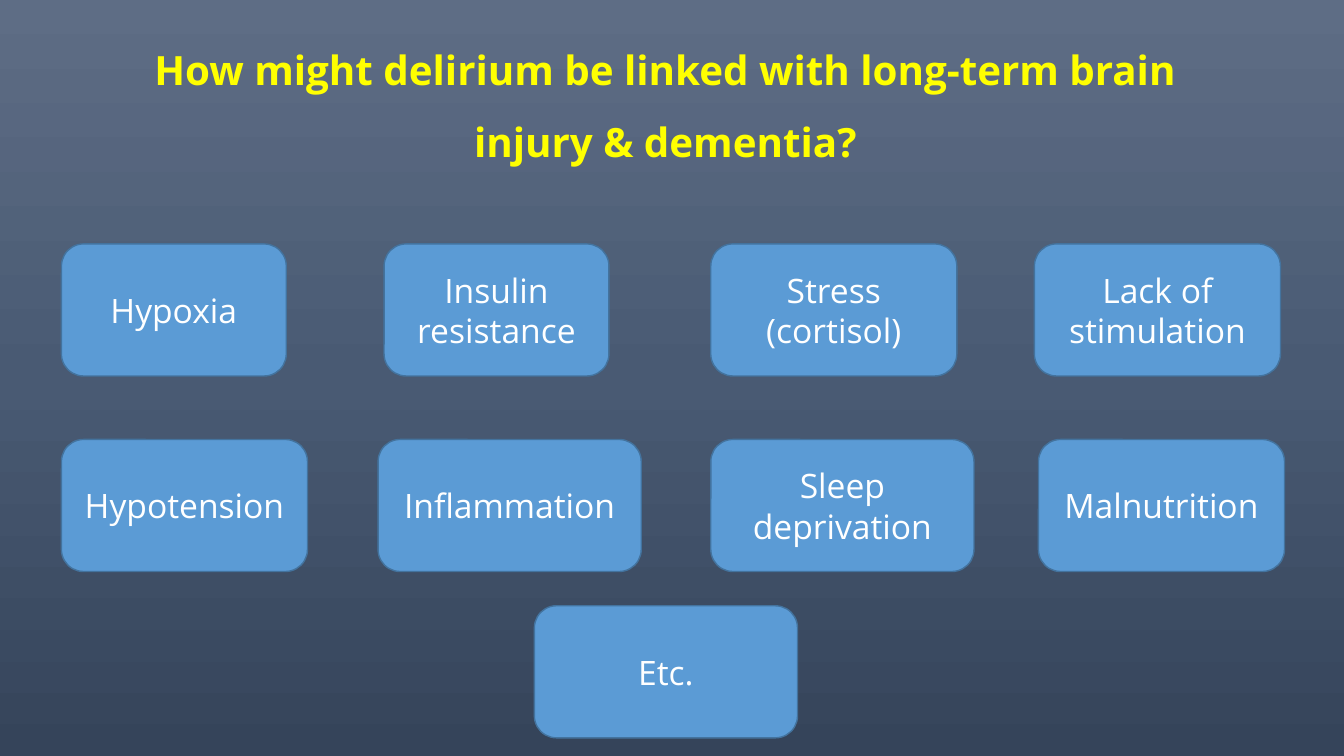
"""Build the slide on mechanisms linking delirium with brain injury and dementia."""
from copy import deepcopy

from pptx import Presentation
from pptx.dml.color import RGBColor
from pptx.enum.shapes import MSO_SHAPE
from pptx.enum.text import MSO_ANCHOR, MSO_AUTO_SIZE, PP_ALIGN
from pptx.oxml.ns import qn
from pptx.util import Inches, Pt

TITLE = "How might delirium be linked with long-term brain injury & dementia?"
FONT = "Open Sans"
BACKGROUND = [(0, "5E6D85"), (0.5, "495A73"), (1, "35445A")]
BOX_HEIGHT = 1.31
ROWS = [
    (2.42, [("Hypoxia", 0.61, 2.23), ("Insulin resistance", 3.81, 2.23),
            ("Stress (cortisol)", 7.05, 2.44), ("Lack of stimulation", 10.26, 2.44)]),
    (4.36, [("Hypotension", 0.61, 2.44), ("Inflammation", 3.75, 2.61),
            ("Sleep deprivation", 7.05, 2.61), ("Malnutrition", 10.3, 2.44)]),
    (6.01, [("Etc.", 5.3, 2.61)]),
]


def color(value):
    return RGBColor.from_string(value)


def write(shape, text, size, shade, bold=False, spacing=1.0):
    frame = shape.text_frame
    frame.text = text
    frame.word_wrap = True
    frame.auto_size = MSO_AUTO_SIZE.NONE
    frame.vertical_anchor = MSO_ANCHOR.MIDDLE
    para = frame.paragraphs[0]
    para.alignment = PP_ALIGN.CENTER
    para.line_spacing = spacing
    font = para.runs[0].font
    font.name, font.size, font.bold = FONT, Pt(size), bold
    font.color.rgb = color(shade)


def paint_background(page):
    fill = page.background.fill
    fill.gradient()
    fill.gradient_angle = 270
    stop_list = page.background._cSld.find(".//" + qn("a:gsLst"))
    stop_list.insert(1, deepcopy(stop_list[0]))
    for stop, (position, shade) in zip(fill.gradient_stops, BACKGROUND):
        stop.position = position
        stop.color.rgb = color(shade)


def add_box(page, text, left, top, width):
    box = page.shapes.add_shape(MSO_SHAPE.ROUNDED_RECTANGLE, Inches(left), Inches(top),
                                Inches(width), Inches(BOX_HEIGHT))
    box.shadow.inherit = False
    box.fill.solid()
    box.fill.fore_color.rgb = color("5B9BD5")
    box.line.color.rgb = color("43739E")
    box.line.width = Pt(1)
    write(box, text, 24, "FFFFFF")


def main():
    deck = Presentation()
    deck.slide_width, deck.slide_height = Inches(13.33), Inches(7.5)
    page = deck.slides.add_slide(deck.slide_layouts[5])
    paint_background(page)

    title = page.shapes.title
    title.left, title.top = Inches(0.85), Inches(0.2)
    title.width, title.height = Inches(11.5), Inches(1.45)
    write(title, TITLE, 28.8, "FFFF00", bold=True, spacing=1.5)

    for top, boxes in ROWS:
        for text, left, width in boxes:
            add_box(page, text, left, top, width)
    deck.save("out.pptx")


if __name__ == "__main__":
    main()
